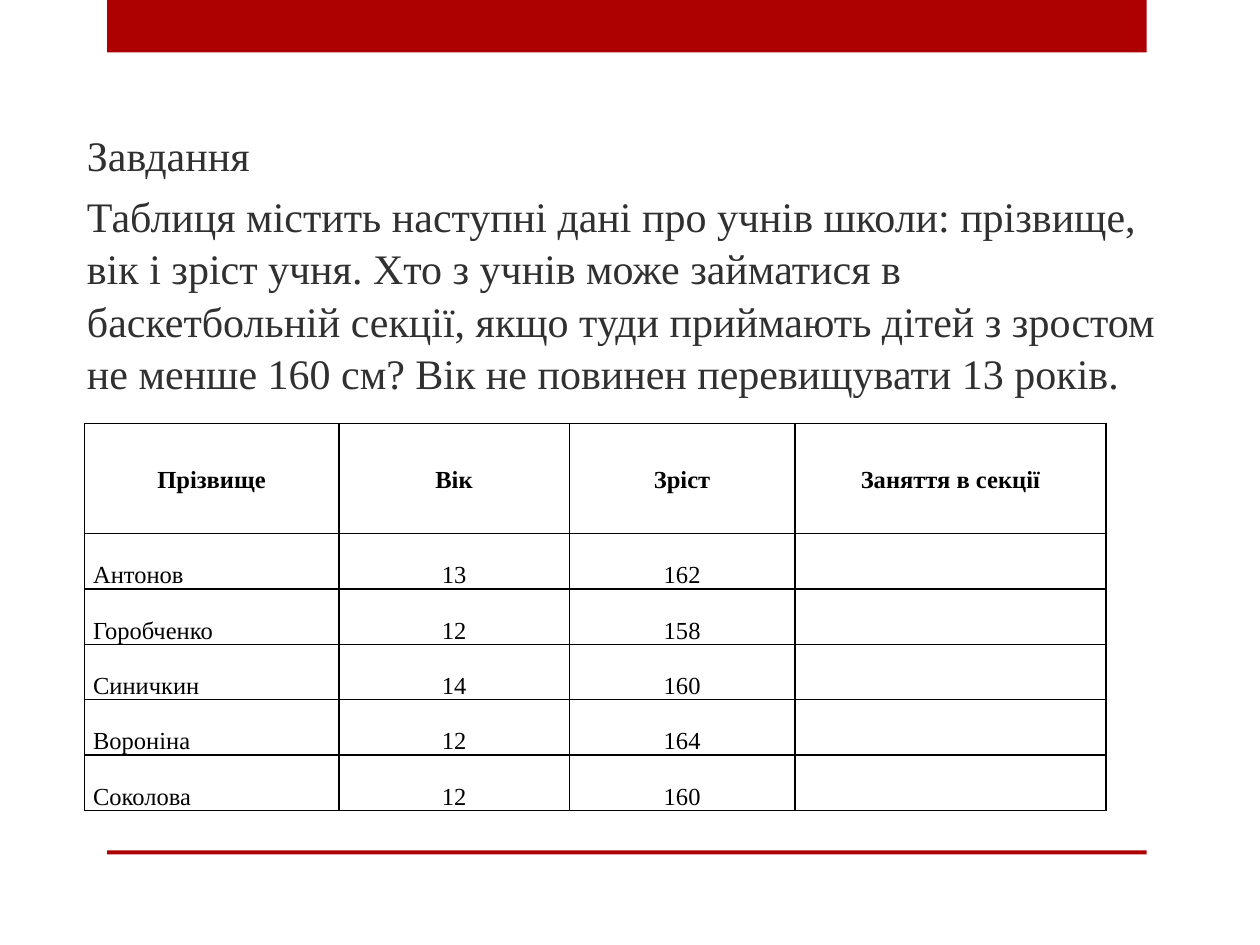
from pptx import Presentation
from pptx.dml.color import RGBColor
from pptx.enum import shapes, text
from pptx.oxml import xmlchemy
from pptx.oxml.ns import qn
from pptx.util import Pt
from lxml import etree

COLORS = {"accent": "AD0101", "body": "303030", "ink": "000000", "paper": "FFFFFF"}
FONT = "Times New Roman"


def add_span(para, words, size, color, bold=False):
    span = para.add_run()
    span.text = words
    span.font.name = FONT
    span.font.size = Pt(size)
    span.font.bold = bold
    span.font.color.rgb = RGBColor.from_string(COLORS[color])


def add_borders(cell):
    """Draw a thin line on all four sides, placed before the cell fill."""
    props = cell._tc.get_or_add_tcPr()
    for position, side in enumerate(("a:lnL", "a:lnR", "a:lnT", "a:lnB")):
        line = etree.Element(qn(side), w=str(Pt(1)))
        fill = etree.SubElement(line, qn("a:solidFill"))
        etree.SubElement(fill, qn("a:srgbClr"), val=COLORS["ink"])
        props.insert(position, line)


deck = Presentation()
deck.slide_width, deck.slide_height = Pt(720), Pt(540)
page = deck.slides.add_slide(deck.slide_layouts[1])
title = page.shapes.title
title.element.getparent().remove(title.element)

# Red bars at the top and bottom
for top, height in ((0, 30), (486, 2.2)):
    bar = page.shapes.add_shape(shapes.MSO_SHAPE.RECTANGLE, Pt(61.2), Pt(top), Pt(594), Pt(height))
    bar.shadow.inherit = False
    bar.fill.solid()
    bar.fill.fore_color.rgb = RGBColor.from_string(COLORS["accent"])
    bar.line.fill.background()

# Task text
body = page.placeholders[1]
body.left, body.top, body.width, body.height = Pt(42.5), Pt(49), Pt(629.3), Pt(356.4)
frame = body.text_frame
frame.word_wrap = True
frame.auto_size = text.MSO_AUTO_SIZE.NONE
frame.vertical_anchor = text.MSO_ANCHOR.TOP
frame.margin_top = Pt(24)
task = (
    "Завдання",
    "Таблиця містить наступні дані про учнів школи: прізвище, вік і зріст учня. "
    "Хто з учнів може займатися в баскетбольній секції, якщо туди приймають дітей "
    "з зростом не менше 160 см? Вік не повинен перевищувати 13 років.",
)
for index, words in enumerate(task):
    para = frame.add_paragraph() if index else frame.paragraphs[0]
    para.space_before = Pt(4.8)
    para.line_spacing = 1.04
    props = para._p.get_or_add_pPr()
    props.set("marL", "0")
    props.set("indent", "0")
    etree.SubElement(props, qn("a:buNone"))
    add_span(para, words, 24, "body")

# Pupils table
rows = (
    ("Прізвище", "Вік", "Зріст", "Заняття в секції"),
    ("Антонов", "13", "162", ""),
    ("Горобченко", "12", "158", ""),
    ("Синичкин", "14", "160", ""),
    ("Вороніна", "12", "164", ""),
    ("Соколова", "12", "160", ""),
)
widths = (145.4, 131.8, 128.9, 177.8)
header_height, row_height = 62.9, 31.7
table = page.shapes.add_table(
    len(rows), len(widths), Pt(48.2), Pt(241.9),
    Pt(sum(widths)), Pt(header_height + row_height * (len(rows) - 1)),
).table
for column, width in zip(table.columns, widths):
    column.width = Pt(width)

for r, row in enumerate(rows):
    header = r == 0
    table.rows[r].height = Pt(header_height if header else row_height)
    for c, words in enumerate(row):
        cell = table.cell(r, c)
        cell.fill.solid()
        cell.fill.fore_color.rgb = RGBColor.from_string(COLORS["paper"])
        cell.margin_left = cell.margin_right = Pt(5)
        cell.margin_top = cell.margin_bottom = Pt(0)
        cell.vertical_anchor = text.MSO_ANCHOR.MIDDLE if header else text.MSO_ANCHOR.BOTTOM
        add_borders(cell)
        if words:
            para = cell.text_frame.paragraphs[0]
            para.line_spacing = 1.15
            para.alignment = text.PP_ALIGN.CENTER if header or c else text.PP_ALIGN.LEFT
            add_span(para, words, 14, "ink", bold=header)

deck.save("out.pptx")
